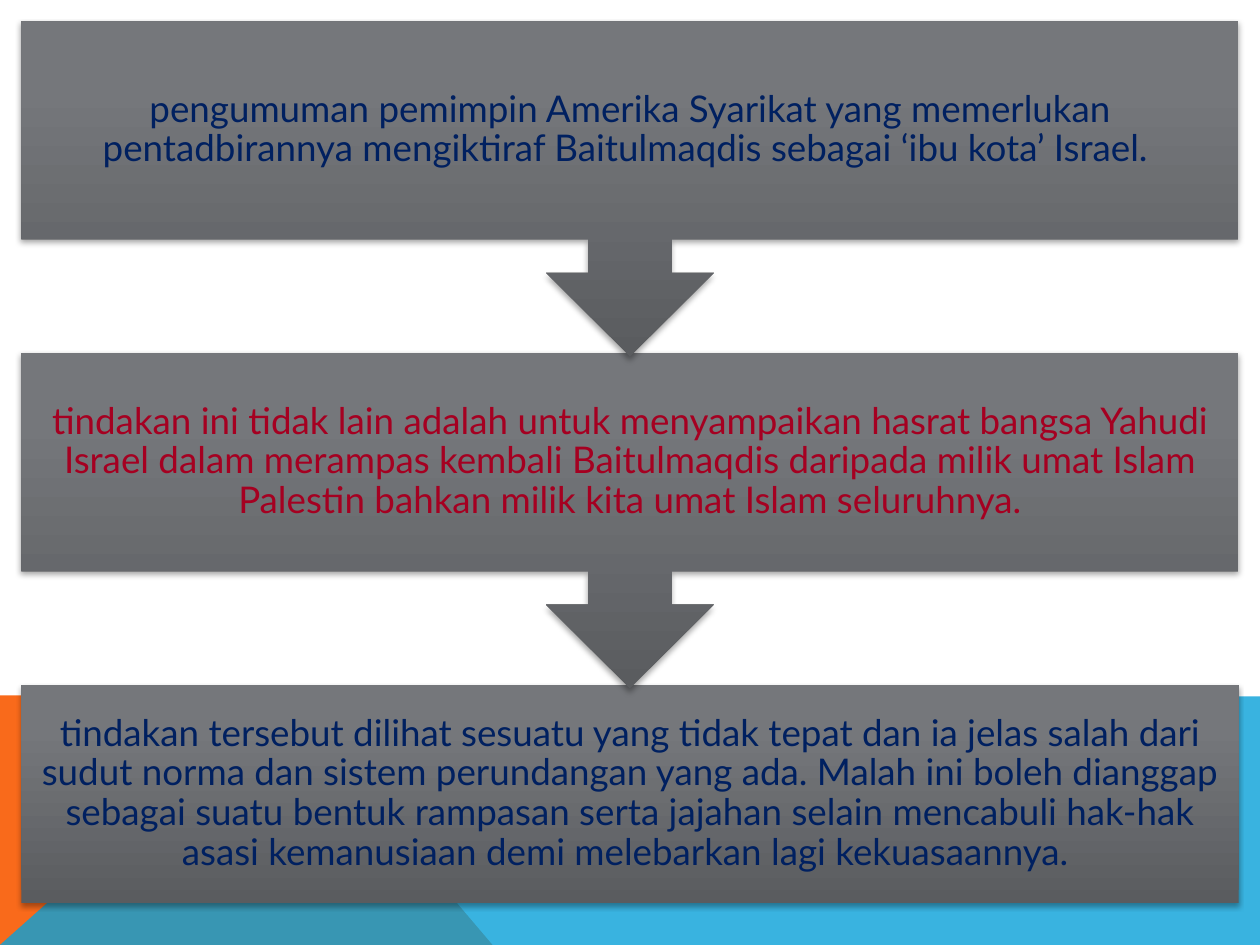
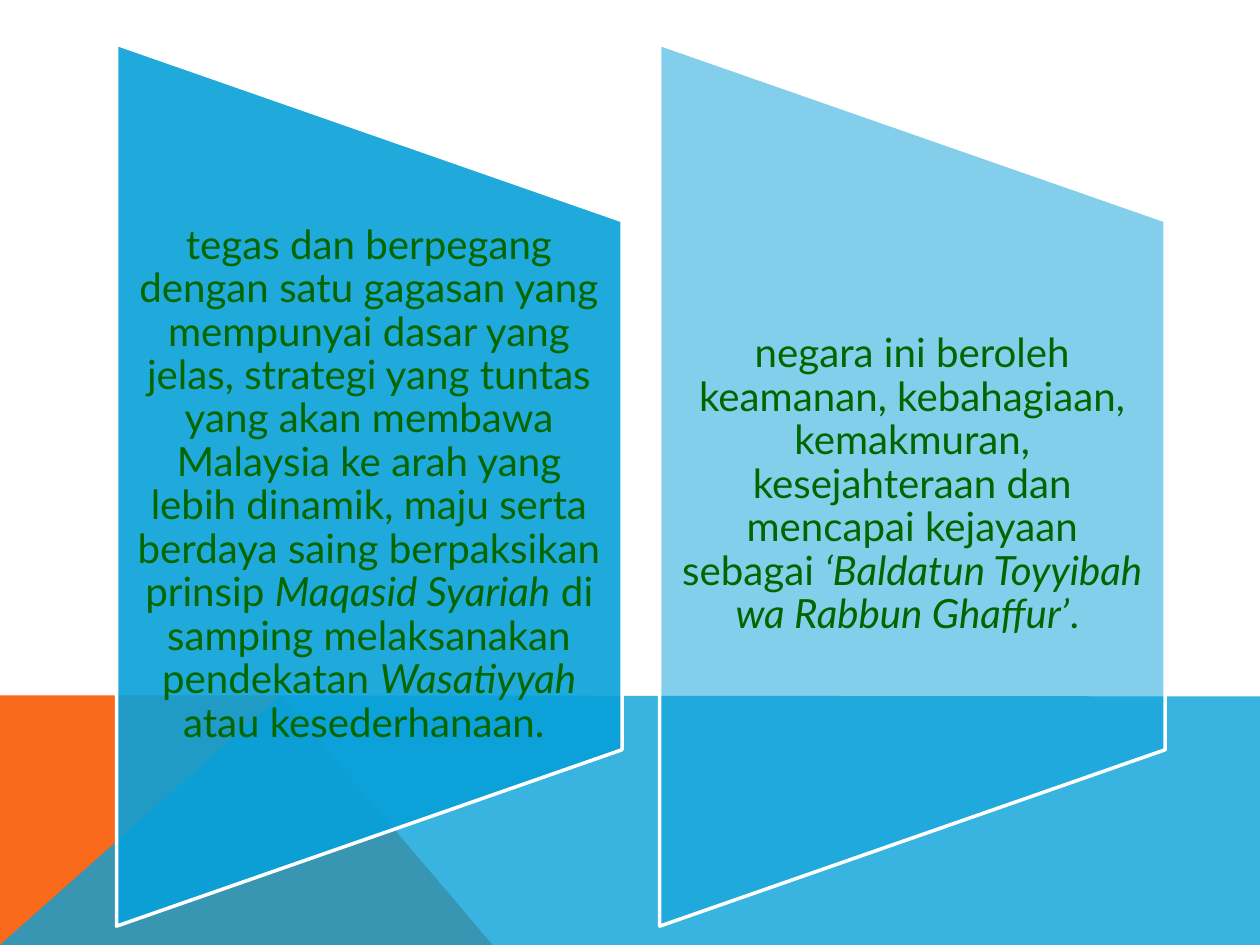
from lxml import etree
from pptx import Presentation
from pptx import util as u
from pptx.dml import color
from pptx.enum import shapes, text
from pptx.oxml import ns

WIDTH, HEIGHT = 25.4, 19.05
BLUE, ORANGE, WHITE = "08A1D9", "F96A1B", "FFFFFF"
NAVY, RED, GREEN = "002060", "A50021", "006600"
GREY_DARK, GREY_LIGHT = "5A5C5F", "75777B"

STEPS = [
    ("pengumuman pemimpin Amerika Syarikat yang memerlukan pentadbirannya "
     "mengiktiraf Baitulmaqdis sebagai ‘ibu kota’ Israel. ", NAVY),
    ("tindakan ini tidak lain adalah untuk menyampaikan hasrat bangsa Yahudi "
     "Israel dalam merampas kembali Baitulmaqdis daripada milik umat Islam "
     "Palestin bahkan milik kita umat Islam seluruhnya.", RED),
    ("tindakan tersebut dilihat sesuatu yang tidak tepat dan ia jelas salah "
     "dari sudut norma dan sistem perundangan yang ada. Malah ini boleh "
     "dianggap sebagai suatu bentuk rampasan serta jajahan selain mencabuli "
     "hak-hak asasi kemanusiaan demi melebarkan lagi kekuasaannya. ", NAVY),
]
PANELS = [
    (["tegas dan berpegang dengan satu gagasan yang mempunyai dasar yang "
      "jelas, strategi yang tuntas yang akan membawa Malaysia ke arah yang "
      "lebih dinamik, maju serta berdaya saing berpaksikan prinsip ",
      "Maqasid Syariah", " di samping melaksanakan pendekatan ",
      "Wasatiyyah", " atau kesederhanaan. "], 90),
    (["negara ini beroleh keamanan, kebahagiaan, kemakmuran, kesejahteraan "
      "dan mencapai kejayaan sebagai ",
      "‘Baldatun Toyyibah wa Rabbun Ghaffur’", ". "], 50),
]


def rgb(value):
    return color.RGBColor.from_string(value)


def apply(target, values):
    for key, value in values.items():
        setattr(target, key, value)


def paint(shape, value, opacity=100):
    shape.shadow.inherit = False
    shape.fill.solid()
    shape.fill.fore_color.rgb = rgb(value)
    if opacity < 100:
        tint = shape.fill._xPr.find(ns.qn("a:solidFill"))[0]
        etree.SubElement(tint, ns.qn("a:alpha"), val=str(opacity * 1000))


def write(shape, parts, size, value, inset_y):
    frame = shape.text_frame
    apply(frame, {
        "word_wrap": True, "vertical_anchor": text.MSO_ANCHOR.MIDDLE,
        "margin_left": u.Cm(0.41), "margin_right": u.Cm(0.41),
        "margin_top": u.Cm(inset_y), "margin_bottom": u.Cm(inset_y)})
    paragraph = frame.paragraphs[0]
    apply(paragraph, {"alignment": text.PP_ALIGN.CENTER, "line_spacing": 0.9})
    for index, part in enumerate(parts):
        run = paragraph.add_run()
        run.text = part
        apply(run.font, {"name": "Lato", "size": u.Pt(size),
                         "italic": index % 2 == 1})
        run.font.color.rgb = rgb(value)


def cast_shadow(shape):
    shape.shadow.inherit = False
    effects = shape.element.spPr.find(ns.qn("a:effectLst"))
    shadow = etree.SubElement(
        effects, ns.qn("a:outerShdw"), blurRad=str(u.Pt(3.1)),
        dist=str(u.Pt(1.8)), dir="5400000", rotWithShape="0")
    black = etree.SubElement(shadow, ns.qn("a:srgbClr"), val="000000")
    etree.SubElement(black, ns.qn("a:alpha"), val="35000")


def shared_bands(slide, left, top, width, height):
    peak, foot = 5.66, 9.93
    bands = [
        ([(0, height), (0, 0), (peak, 0), (foot, height)], ORANGE, 100),
        ([(0, height), (peak, 0), (width, 0.02), (width, height)], BLUE, 80),
    ]
    for corners, value, opacity in bands:
        points = [(u.Cm(left + x), u.Cm(top + y)) for x, y in corners]
        outline = slide.shapes.build_freeform(*points[0])
        outline.add_line_segments(points[1:], close=True)
        band = outline.convert_to_shape()
        paint(band, value, opacity)
        band.line.fill.background()
        slide.slide_layout.shapes.element.append(band.element)


def step_flow(slide, left, top, width, height):
    box_height, arrow_height = 4.39, 2.37
    pitch = (height - box_height) / (len(STEPS) - 1)
    for index, (wording, value) in reversed(list(enumerate(STEPS))):
        last = index == len(STEPS) - 1
        kind = (shapes.MSO_SHAPE.RECTANGLE if last
                else shapes.MSO_SHAPE.DOWN_ARROW_CALLOUT)
        step = slide.shapes.add_shape(
            kind, u.Cm(left), u.Cm(top + index * pitch), u.Cm(width),
            u.Cm(box_height if last else box_height + arrow_height))
        step.fill.gradient()
        step.fill.gradient_angle = 90
        stops = zip(step.fill.gradient_stops, (0, 0.8),
                    (GREY_DARK, GREY_LIGHT))
        for stop, position, shade in stops:
            stop.position = position
            stop.color.rgb = rgb(shade)
        step.line.fill.background()
        cast_shadow(step)
        write(step, [wording], 21, value, 0.41)


def panel_pair(slide, left, top, width, height):
    panel_width = 10.19
    pitch = (width - panel_width) / (len(PANELS) - 1)
    turn = (height - panel_width) / 2
    for index, (parts, opacity) in enumerate(PANELS):
        x = left + index * pitch
        panel = slide.shapes.add_shape(
            shapes.MSO_SHAPE.FLOWCHART_MANUAL_OPERATION,
            u.Cm(x - turn), u.Cm(top + turn), u.Cm(height), u.Cm(panel_width))
        panel.rotation = 270
        paint(panel, BLUE, opacity)
        panel.line.color.rgb = rgb(WHITE)
        panel.line.width = u.Pt(2)
        wording = slide.shapes.add_textbox(
            u.Cm(x), u.Cm(top + height * 0.2),
            u.Cm(panel_width), u.Cm(height * 0.6))
        write(wording, parts, 23, GREEN, 0)


def main():
    deck = Presentation()
    apply(deck, {"slide_width": u.Cm(WIDTH), "slide_height": u.Cm(HEIGHT)})
    blank = deck.slide_layouts[6]
    for holder in list(blank.placeholders):
        blank.shapes.element.remove(holder.element)
    flow, pair = [deck.slides.add_slide(blank) for _ in range(2)]
    shared_bands(flow, 0, 14.02, WIDTH, HEIGHT - 14.02)
    step_flow(flow, 0.43, 0.43, 24.54, 17.77)
    panel_pair(pair, 2.35, 0.89, 21.14, 17.78)
    deck.save("out.pptx")


if __name__ == "__main__":
    main()
